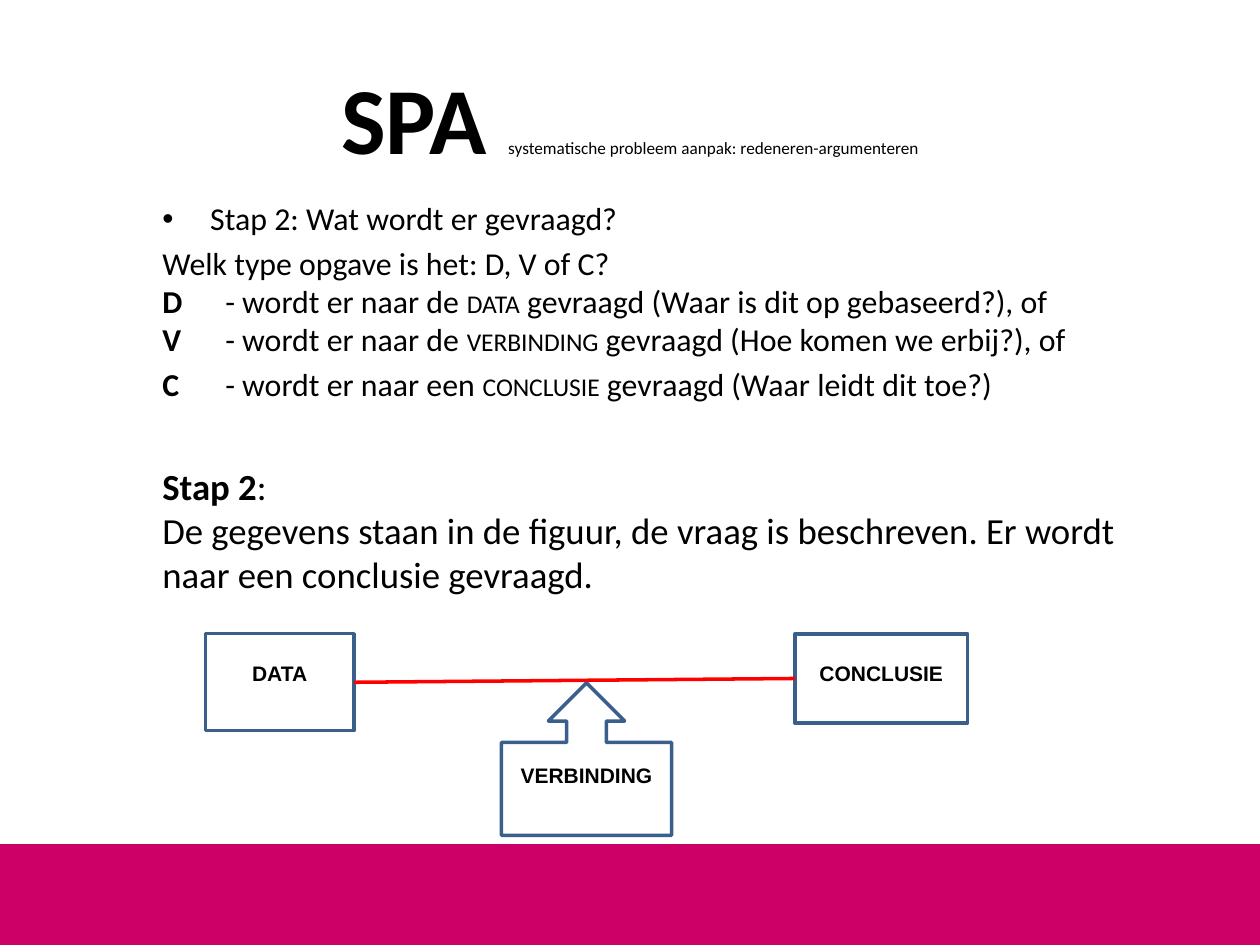
from dataclasses import dataclass

from lxml import etree
from pptx import Presentation
from pptx.dml.color import RGBColor
from pptx.enum.shapes import MSO_CONNECTOR, MSO_SHAPE
from pptx.enum.text import MSO_ANCHOR, PP_ALIGN
from pptx.oxml.ns import qn
from pptx.util import Inches, Pt

RECTANGLE = MSO_SHAPE.RECTANGLE
CALLOUT = MSO_SHAPE.UP_ARROW_CALLOUT
STRAIGHT = MSO_CONNECTOR.STRAIGHT
TOP, MIDDLE = MSO_ANCHOR.TOP, MSO_ANCHOR.MIDDLE
LEFT, CENTER = PP_ALIGN.LEFT, PP_ALIGN.CENTER
BOTTOM_SIDE_LEFT, BOTTOM_SIDE_RIGHT = 1, 3

COLORS = {"band": "CC0066", "outline": "3A5F8C", "beam": "FF0000", "text": "000000"}


@dataclass(frozen=True)
class Area:
    left: float
    top: float
    width: float
    height: float

    def lengths(self) -> tuple:
        return tuple(Inches(v) for v in (self.left, self.top, self.width, self.height))


@dataclass(frozen=True)
class Piece:
    text: str
    size: float
    bold: bool = False
    small_caps: bool = False
    font: str = "Calibri"


@dataclass(frozen=True)
class Option:
    letter: str
    before: str
    term: str
    after: str

    def pieces(self, size: float) -> list[Piece]:
        return [
            Piece(self.letter, size, bold=True),
            Piece(f"\t- {self.before} ", size),
            Piece(self.term, size, small_caps=True),
            Piece(f" {self.after}", size),
        ]


def color(name: str) -> RGBColor:
    return RGBColor.from_string(COLORS[name])


def add_pieces(paragraph, pieces: list[Piece]) -> None:
    for piece in pieces:
        run = paragraph.add_run()
        run.text = piece.text
        run.font.name = piece.font
        run.font.size = Pt(piece.size)
        run.font.bold = piece.bold
        run.font.color.rgb = color("text")
        if piece.small_caps:
            run._r.get_or_add_rPr().set("cap", "small")


def add_text_frame(slide, area: Area, anchor=TOP):
    frame = slide.shapes.add_textbox(*area.lengths()).text_frame
    frame.word_wrap = True
    frame.vertical_anchor = anchor
    return frame


def add_bullet(paragraph, indent: float) -> None:
    properties = paragraph._p.get_or_add_pPr()
    properties.set("marL", str(Inches(indent)))
    properties.set("indent", str(-Inches(indent)))
    etree.SubElement(properties, qn("a:buFont")).set("typeface", "Arial")
    etree.SubElement(properties, qn("a:buChar")).set("char", "•")


def add_tab_stop(paragraph, position: float) -> None:
    tabs = etree.SubElement(paragraph._p.get_or_add_pPr(), qn("a:tabLst"))
    tab = etree.SubElement(tabs, qn("a:tab"))
    tab.set("pos", str(Inches(position)))
    tab.set("algn", "l")


def add_label(frame, text: str, top_inset: float) -> None:
    frame.word_wrap = True
    frame.vertical_anchor = TOP
    frame.margin_left = frame.margin_right = Inches(0.07)
    frame.margin_top, frame.margin_bottom = Inches(top_inset), Inches(0.04)
    paragraph = frame.paragraphs[0]
    paragraph.alignment = CENTER
    paragraph.line_spacing = Pt(9)
    add_pieces(paragraph, [Piece(text, 12, bold=True, font="Arial")])


def add_outline(slide, kind, area: Area):
    shape = slide.shapes.add_shape(kind, *area.lengths())
    shape.shadow.inherit = False
    shape.fill.background()
    shape.line.color.rgb = color("outline")
    shape.line.width = Pt(2)
    return shape


def add_labelled_box(slide, area: Area, text: str):
    box = add_outline(slide, RECTANGLE, area)
    add_label(box.text_frame, text, 0.29)
    return box


def add_band(slide) -> None:
    band = slide.shapes.add_shape(RECTANGLE, *Area(0, 6.7, 10, 0.8).lengths())
    band.shadow.inherit = False
    band.fill.solid()
    band.fill.fore_color.rgb = color("band")
    band.line.fill.background()


def add_title(slide) -> None:
    title = add_text_frame(slide, Area(0.5, 0.3, 9, 1.25), MIDDLE).paragraphs[0]
    title.alignment = CENTER
    subtitle = "systematische probleem aanpak: redeneren-argumenteren"
    add_pieces(title, [Piece("SPA ", 54, bold=True), Piece(subtitle, 9.8)])


def add_question(slide) -> None:
    size = 18.2
    options = [
        Option("D", "wordt er naar de", "data", "gevraagd (Waar is dit op gebaseerd?), of"),
        Option("V", "wordt er naar de", "verbinding", "gevraagd (Hoe komen we erbij?), of"),
        Option("C", "wordt er naar een", "conclusie", "gevraagd (Waar leidt dit toe?)"),
    ]
    frame = add_text_frame(slide, Area(1.19, 1.53, 7.53, 1.68))
    step = frame.paragraphs[0]
    add_bullet(step, 0.38)
    add_pieces(step, [Piece("Stap 2: Wat wordt er gevraagd?", size)])

    choices, last_choice = frame.add_paragraph(), frame.add_paragraph()
    for paragraph in (choices, last_choice):
        add_tab_stop(paragraph, 0.5)
        paragraph.space_before = Pt(3.6)
    add_pieces(choices, [Piece("Welk type opgave is het: D, V of C?", size)])
    for option in options[:-1]:
        choices.add_line_break()
        add_pieces(choices, option.pieces(size))
    add_pieces(last_choice, options[-1].pieces(size))


def add_answer(slide) -> None:
    frame = add_text_frame(slide, Area(1.19, 3.63, 7.93, 1.16))
    add_pieces(frame.paragraphs[0], [Piece("Stap 2", 21, bold=True), Piece(":", 21)])
    answer = (
        "De gegevens staan in de figuur, de vraag is beschreven. "
        "Er wordt naar een conclusie gevraagd."
    )
    add_pieces(frame.add_paragraph(), [Piece(answer, 21)])


def add_argument_diagram(slide) -> None:
    data = add_labelled_box(slide, Area(1.63, 5.03, 1.18, 0.77), "DATA")
    conclusion = add_labelled_box(slide, Area(6.31, 5.03, 1.37, 0.71), "CONCLUSIE")

    beam = slide.shapes.add_connector(STRAIGHT, 0, 0, 0, 0)
    beam.begin_connect(data, BOTTOM_SIDE_RIGHT)
    beam.end_connect(conclusion, BOTTOM_SIDE_LEFT)
    beam.line.color.rgb = color("beam")
    beam.line.width = Pt(2)
    etree.SubElement(beam._element.spPr, qn("a:effectLst"))

    support = add_outline(slide, CALLOUT, Area(3.98, 5.42, 1.35, 1.21))
    for index, value in enumerate((0.26, 0.25, 0.25, 0.61)):
        support.adjustments[index] = value
    add_label(add_text_frame(slide, Area(3.98, 6.09, 1.35, 0.3)), "VERBINDING", 0.04)


def main() -> None:
    presentation = Presentation()
    presentation.slide_width, presentation.slide_height = Inches(10), Inches(7.5)
    slide = presentation.slides.add_slide(presentation.slide_layouts[6])
    add_band(slide)
    add_title(slide)
    add_question(slide)
    add_argument_diagram(slide)
    add_answer(slide)
    presentation.save("out.pptx")


if __name__ == "__main__":
    main()
